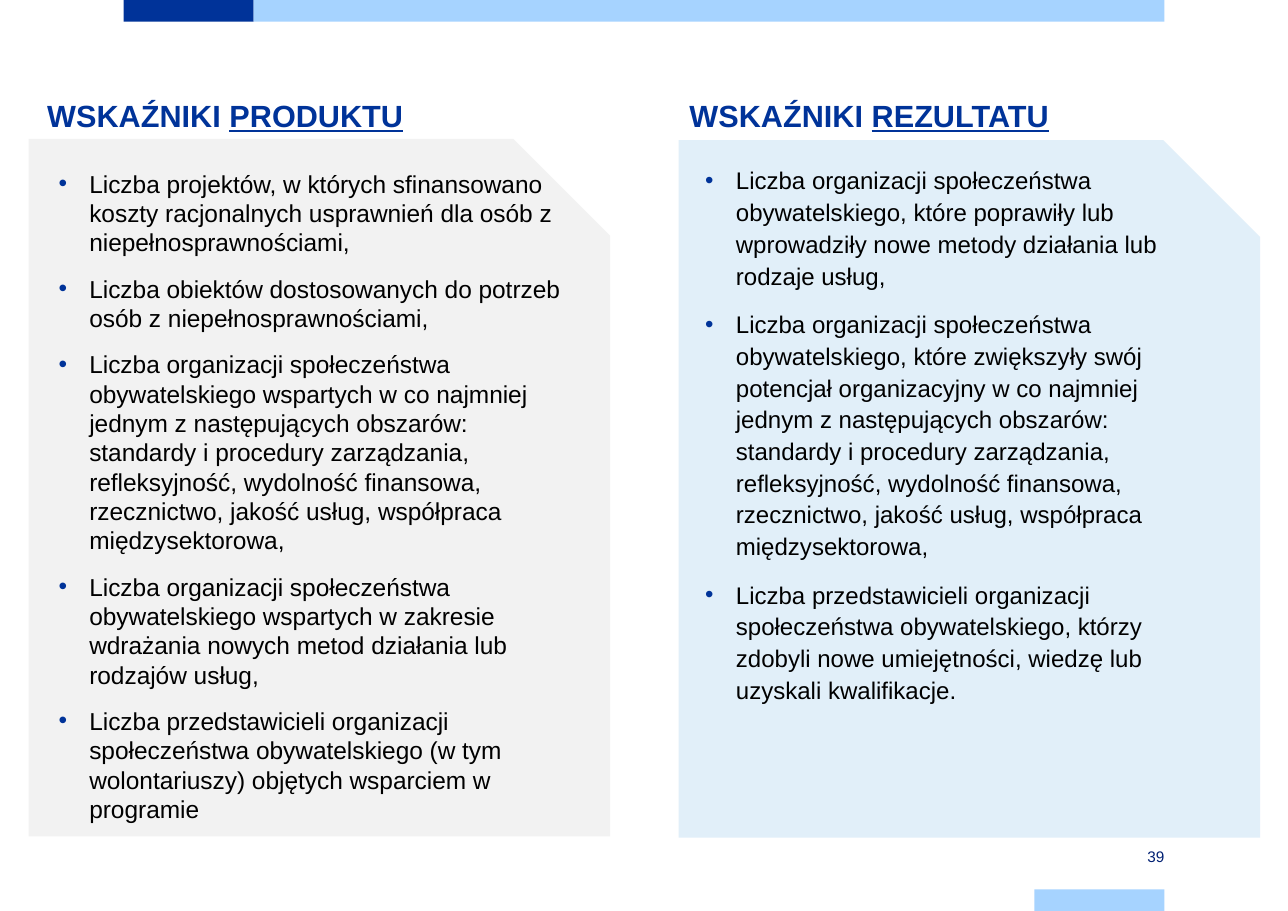
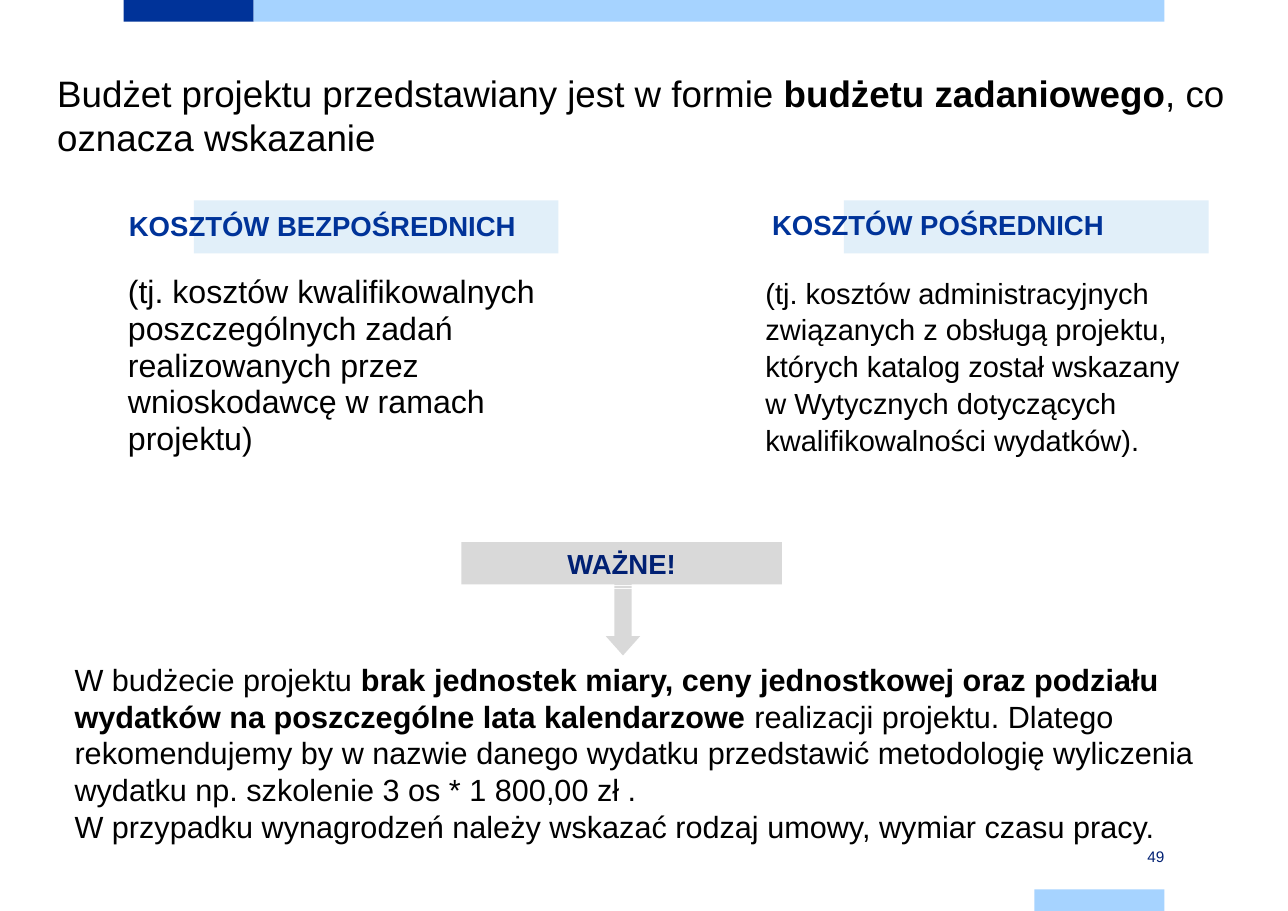
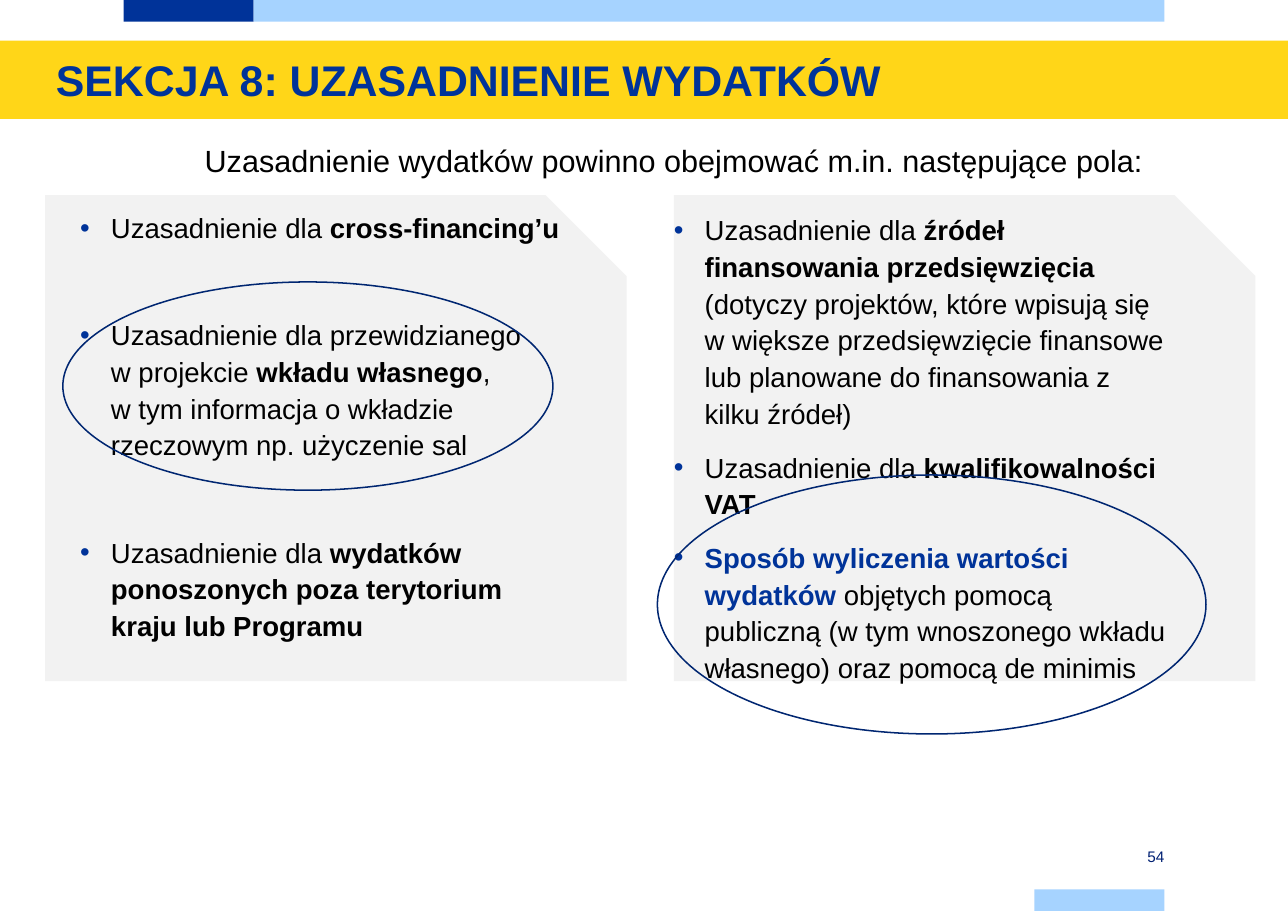
import dataclasses

import lxml.etree
import pptx
import pptx.dml.color
import pptx.enum.shapes
import pptx.enum.text
import pptx.oxml.ns
import pptx.util

Cm = pptx.util.Cm
Pt = pptx.util.Pt
Align = pptx.enum.text.PP_ALIGN
Anchor = pptx.enum.text.MSO_ANCHOR
Shape = pptx.enum.shapes.MSO_SHAPE


@dataclasses.dataclass(frozen=True)
class Theme:
    font: str = "Arial"
    # Colours
    blue: str = "003399"
    navy: str = "002073"
    outline: str = "002671"
    sky: str = "A6D3FF"
    pale_blue: str = "E1EFF9"
    pale_grey: str = "F2F2F2"
    grey: str = "D9D9D9"
    yellow: str = "FFD618"
    black: str = "000000"
    # Type sizes
    section: float = 28
    lead: float = 24
    cost_large: float = 21
    heading: float = 20
    cost_small: float = 19
    label: float = 18
    products: float = 16
    results: float = 15.7
    page: float = 10
    # Paragraph spacing
    gap: float = 11
    wide_gap: float = 46
    line: float = 24


THEME = Theme()
BAND_UNIT = 3
BAND_HEIGHT = 0.5
BAND_LEFT = 2.85
BAND_RIGHT = BAND_LEFT + 8 * BAND_UNIT


def rgb(value):
    return pptx.dml.color.RGBColor.from_string(value)


def box(left, top, width, height):
    return Cm(left), Cm(top), Cm(width), Cm(height)


def add_block(slide, area, fill=None, kind=Shape.RECTANGLE, outline=None):
    """Preset shape with a plain fill or a plain outline."""
    shape = slide.shapes.add_shape(kind, *box(*area))
    shape.shadow.inherit = False
    if fill:
        shape.fill.solid()
        shape.fill.fore_color.rgb = rgb(fill)
    else:
        shape.fill.background()
    if outline:
        shape.line.color.rgb = rgb(outline)
        shape.line.width = Pt(1)
    else:
        shape.line.fill.background()
    return shape


def add_bullet(paragraph):
    properties = paragraph._p.get_or_add_pPr()
    properties.set("marL", str(Cm(0.71)))
    properties.set("indent", str(-Cm(0.71)))
    qn = pptx.oxml.ns.qn
    colour = lxml.etree.SubElement(properties, qn("a:buClr"))
    lxml.etree.SubElement(colour, qn("a:srgbClr"), val=THEME.blue)
    lxml.etree.SubElement(properties, qn("a:buFont"), typeface=THEME.font)
    lxml.etree.SubElement(properties, qn("a:buChar"), char="•")


def add_runs(paragraph, parts, size, colour, bold):
    """A part is plain text, or (text, font settings)."""
    for part in [parts] if isinstance(parts, str) else parts:
        text, settings = (part, {}) if isinstance(part, str) else part
        for index, line in enumerate(text.split("\n")):
            if index:
                paragraph.add_line_break()
            run = paragraph.add_run()
            run.text = line
            run.font.name = THEME.font
            run.font.size = Pt(size)
            run.font.bold = settings.get("bold", bold)
            run.font.underline = settings.get("underline", False)
            run.font.color.rgb = rgb(settings.get("colour", colour))


def fill_text(frame, paragraphs, size, colour=THEME.black, bold=False,
              align=Align.LEFT, line=None, gap=0, bullets=False):
    frame.word_wrap = True
    for index, parts in enumerate(paragraphs):
        paragraph = frame.add_paragraph() if index else frame.paragraphs[0]
        if bullets:
            add_bullet(paragraph)
        paragraph.alignment = align
        if line:
            paragraph.line_spacing = line
        if index and gap:
            paragraph.space_before = Pt(gap)
        add_runs(paragraph, parts, size, colour, bold)


def add_text(slide, area, paragraphs, size, inset=True, **style):
    frame = slide.shapes.add_textbox(*box(*area)).text_frame
    if not inset:
        frame.margin_left = frame.margin_right = 0
        frame.margin_top = frame.margin_bottom = 0
    fill_text(frame, paragraphs, size, **style)
    return frame


def add_list(slide, area, paragraphs, size, line=None, gap=THEME.gap):
    add_text(slide, area, paragraphs, size, inset=False, line=line, gap=gap,
             bullets=True)


def strong(text, **settings):
    return text, {"bold": True, **settings}


def start_slide(presentation, number):
    """Blank slide with the shared bands and the page number."""
    slide = presentation.slides.add_slide(presentation.slide_layouts[6])
    footer_left = BAND_RIGHT - BAND_UNIT
    add_block(slide, (BAND_LEFT, 0, BAND_UNIT, BAND_HEIGHT), THEME.blue)
    add_block(slide, (BAND_LEFT + BAND_UNIT, 0, 7 * BAND_UNIT, BAND_HEIGHT),
              THEME.sky)
    add_block(slide, (footer_left, 20.5, BAND_UNIT, BAND_HEIGHT), THEME.sky)
    frame = add_text(slide, (footer_left, 19.5, BAND_UNIT, BAND_HEIGHT),
                     [str(number)], THEME.page, inset=False,
                     colour=THEME.navy, align=Align.RIGHT)
    frame.vertical_anchor = Anchor.MIDDLE
    return slide


def build_indicators(presentation):
    slide = start_slide(presentation, 39)
    # Panels with their headings
    for left, heading_left, top, fill, word in (
        (15.65, 15.65, 3.23, THEME.pale_blue, "REZULTATU"),
        (0.66, 0.84, 3.2, THEME.pale_grey, "PRODUKTU"),
    ):
        add_block(slide, (left, top, 13.41, 16.08), fill,
                  Shape.SNIP_1_RECTANGLE)
        add_text(slide, (heading_left, 2.11, 10, 1.12),
                 [["WSKAŹNIKI ", (word, {"underline": True})]],
                 THEME.heading, colour=THEME.blue, bold=True)
    # Indicator lists
    add_list(slide, (1.35, 3.89, 11.99, 13), [
        "Liczba projektów, w których sfinansowano koszty racjonalnych "
        "usprawnień dla osób z niepełnosprawnościami,",
        "Liczba obiektów dostosowanych do potrzeb osób z "
        "niepełnosprawnościami,",
        "Liczba organizacji społeczeństwa obywatelskiego wspartych w co "
        "najmniej jednym z następujących obszarów: standardy i procedury "
        "zarządzania, refleksyjność, wydolność finansowa, rzecznictwo, "
        "jakość usług, współpraca międzysektorowa,",
        "Liczba organizacji społeczeństwa obywatelskiego wspartych w "
        "zakresie wdrażania nowych metod działania lub rodzajów usług,",
        "Liczba przedstawicieli organizacji społeczeństwa obywatelskiego "
        "(w tym wolontariuszy) objętych wsparciem w programie",
    ], THEME.products)
    add_list(slide, (16.26, 3.76, 11.51, 13), [
        "Liczba organizacji społeczeństwa obywatelskiego, które poprawiły "
        "lub wprowadziły nowe metody działania lub rodzaje usług,",
        "Liczba organizacji społeczeństwa obywatelskiego, które zwiększyły "
        "swój potencjał organizacyjny w co najmniej jednym z następujących "
        "obszarów: standardy i procedury zarządzania, refleksyjność, "
        "wydolność finansowa, rzecznictwo, jakość usług, współpraca "
        "międzysektorowa,",
        "Liczba przedstawicieli organizacji społeczeństwa obywatelskiego, "
        "którzy zdobyli nowe umiejętności, wiedzę lub uzyskali kwalifikacje.",
    ], THEME.results, line=1.1)


def build_budget(presentation):
    slide = start_slide(presentation, 49)
    add_text(slide, (1.07, 1.5, 27.58, 2.31), [[
        "Budżet projektu przedstawiany jest w formie ",
        strong("budżetu zadaniowego"), ", co oznacza wskazanie",
    ]], THEME.lead)
    # Two kinds of cost
    for bar_left, label_area, label, text_area, text, size in (
        (4.47, (2.67, 4.7, 9.53, 1.02), "KOSZTÓW BEZPOŚREDNICH",
         (2.95, 6.3, 9.93, 5.8),
         "(tj. kosztów kwalifikowalnych poszczególnych zadań realizowanych "
         "przez wnioskodawcę w ramach projektu)", THEME.cost_large),
        (19.46, (17.5, 4.67, 8.26, 1.02), "KOSZTÓW POŚREDNICH",
         (17.65, 6.3, 9.65, 6.2),
         "(tj. kosztów administracyjnych związanych z obsługą projektu, "
         "których katalog został wskazany w Wytycznych dotyczących "
         "kwalifikowalności wydatków).", THEME.cost_small),
    ):
        add_block(slide, (bar_left, 4.62, 8.41, 1.22), THEME.pale_blue)
        add_text(slide, label_area, [label], THEME.label, colour=THEME.blue,
                 bold=True, align=Align.CENTER)
        add_text(slide, text_area, [text], size, inset=False,
                 line=Pt(THEME.line))
    # Warning with its arrow
    warning = add_block(slide, (10.64, 12.5, 7.39, 0.97), THEME.grey)
    warning.text_frame.vertical_anchor = Anchor.MIDDLE
    fill_text(warning.text_frame, ["WAŻNE!"], THEME.label, colour=THEME.navy,
              bold=True, align=Align.CENTER, line=Pt(22))
    arrow = add_block(slide, (13.54, 13.89, 1.65, 0.79), THEME.grey,
                      Shape.STRIPED_RIGHT_ARROW)
    arrow.adjustments[1] = 0.56
    arrow.rotation = 90
    add_text(slide, (1.47, 15.11, 26.57, 5.56), [
        ["W budżecie projektu ",
         strong("brak jednostek miary, ceny jednostkowej oraz podziału "
                "wydatków na poszczególne lata kalendarzowe "),
         "realizacji projektu. Dlatego rekomendujemy by w nazwie danego "
         "wydatku przedstawić metodologię wyliczenia wydatku np. szkolenie "
         "3 os * 1 800,00 zł ."],
        "W przypadku wynagrodzeń należy wskazać rodzaj umowy, wymiar czasu "
        "pracy.",
    ], THEME.heading)


def build_justification(presentation):
    slide = start_slide(presentation, 54)
    # Panels and section title
    for left in (1.04, 15.54):
        add_block(slide, (left, 4.5, 13.41, 11.2), THEME.pale_grey,
                  Shape.SNIP_1_RECTANGLE)
    add_block(slide, (0, 0.94, 29.7, 1.8), THEME.yellow)
    add_text(slide, (1.04, 1.12, 28.19, 1.45),
             ["SEKCJA 8: UZASADNIENIE WYDATKÓW"], THEME.section,
             colour=THEME.blue, bold=True)
    add_text(slide, (1.45, 3.15, 28.19, 1.14),
             ["Uzasadnienie wydatków powinno obejmować m.in. następujące "
              "pola:"], THEME.heading, align=Align.CENTER)
    # Required fields
    intro = "Uzasadnienie dla "
    add_list(slide, (1.85, 4.78, 11.2, 11.07), [
        [intro, strong("cross-financing’u")],
        [intro + "przewidzianego\nw projekcie ", strong("wkładu własnego"),
         ",\nw tym informacja o wkładzie rzeczowym np. użyczenie sal"],
        [intro, strong("wydatków ponoszonych poza terytorium kraju lub "
                       "Programu")],
    ], THEME.label, line=Pt(THEME.line), gap=THEME.wide_gap)
    add_list(slide, (15.54, 4.83, 11.51, 11.6), [
        [intro, strong("źródeł finansowania przedsięwzięcia"),
         " (dotyczy projektów, które wpisują się w większe przedsięwzięcie "
         "finansowe lub planowane do finansowania z kilku źródeł)"],
        [intro, strong("kwalifikowalności VAT")],
        [strong("Sposób wyliczenia wartości wydatków ", colour=THEME.blue),
         "objętych pomocą publiczną (w tym wnoszonego wkładu własnego) oraz "
         "pomocą de minimis"],
    ], THEME.label, line=Pt(THEME.line))
    # Rings around the key fields
    for area in ((15.16, 10.95, 12.65, 5.97), (1.45, 6.5, 11.3, 4.8)):
        add_block(slide, area, kind=Shape.OVAL, outline=THEME.outline)


def main():
    presentation = pptx.Presentation()
    presentation.slide_width = Cm(29.7)
    presentation.slide_height = Cm(21)
    build_indicators(presentation)
    build_budget(presentation)
    build_justification(presentation)
    presentation.save("out.pptx")


if __name__ == "__main__":
    main()
